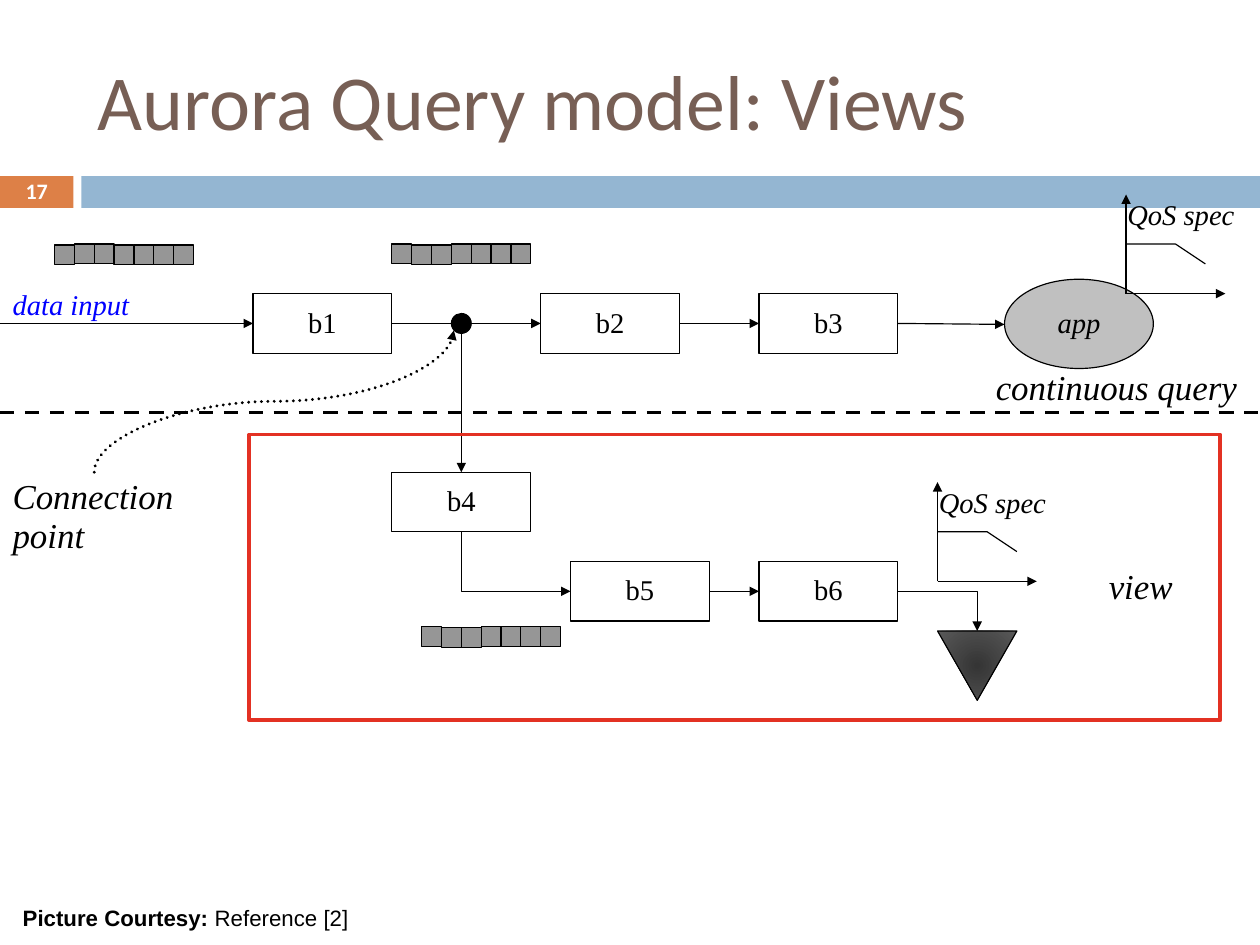
from dataclasses import dataclass

from lxml.etree import SubElement as Sub
from pptx import Presentation
from pptx.dml.color import RGBColor as Rgb
from pptx.enum.dml import MSO_LINE as Dash
from pptx.enum.shapes import MSO_CONNECTOR as Link, MSO_SHAPE as Form
from pptx.enum.text import MSO_ANCHOR as Anchor, MSO_AUTO_SIZE as Fit, PP_ALIGN as Align
from pptx.oxml.ns import qn
from pptx.util import Cm, Inches, Pt

WIDE, HIGH = Cm(28), Cm(21)
UNIT = WIDE / 127
SERIF = "Times New Roman"
HUES = {
    "ink": "000000", "paper": "FFFFFF", "title": "775F55", "orange": "DD8047",
    "sky": "94B6D2", "blue": "0000FF", "red": "E33123", "grey": "969696",
    "silver": "C0C0C0", "core": "353535", "rim": "595959",
}


@dataclass(frozen=True)
class Cell:
    col: float
    row: float
    wide: float
    high: float


@dataclass(frozen=True)
class Run:
    text: str
    size: float = 18
    font: str = SERIF
    hue: str = "ink"
    bold: bool = False
    slant: bool = False


@dataclass(frozen=True)
class Note:
    cell: Cell
    lines: tuple
    pad: float = 0.11
    wrap: bool = False


@dataclass(frozen=True)
class Wire:
    start: tuple
    stop: tuple
    kind: int = Link.STRAIGHT
    form: str = ""
    turn: int = 0
    flip: str = ""
    tail: str = ""
    head: str = ""
    side: int = 1
    tip: bool = True
    dash: object = None
    width: float = 0.75


def span(count: float) -> int:
    return round(count * UNIT)


def spot(col: float, row: float) -> tuple:
    return span(col + 0.5), span(row + 0.6)


def place(cell: Cell) -> tuple:
    return *spot(cell.col, cell.row), span(cell.wide), span(cell.high)


def tint(name: str) -> Rgb:
    return Rgb.from_string(HUES[name])


def write(frame, lines: tuple, align=Align.LEFT, pad: float = 0.11, wrap: bool = False, gap: float = 0.93) -> None:
    frame.word_wrap = wrap
    frame.margin_left = frame.margin_right = Inches(pad)
    frame.margin_top = frame.margin_bottom = Inches(pad / 2)
    for index, line in enumerate(lines):
        para = frame.add_paragraph() if index else frame.paragraphs[0]
        para.alignment, para.line_spacing = align, gap
        for item in line:
            run = para.add_run()
            run.text = item.text
            font = run.font
            font.name, font.size = item.font, Pt(item.size)
            font.bold, font.italic = item.bold, item.slant
            font.color.rgb = tint(item.hue)


def draw(slide, form, cell: Cell, fill: str = "", edge: str = "ink", width: float = 0.75, run: Run | None = None):
    shape = slide.shapes.add_shape(form, *place(cell))
    trim(shape, fill, edge, width)
    if run:
        shape.text_frame.vertical_anchor = Anchor.MIDDLE
        write(shape.text_frame, ((run,),), Align.CENTER)
    return shape


def trim(shape, fill: str, edge: str, width: float) -> None:
    shape.shadow.inherit = False
    if fill:
        shape.fill.solid()
        shape.fill.fore_color.rgb = tint(fill)
    else:
        shape.fill.background()
    if edge:
        shape.line.color.rgb, shape.line.width = tint(edge), Pt(width)
    else:
        shape.line.fill.background()


def label(slide, note: Note) -> None:
    frame = slide.shapes.add_textbox(*place(note.cell)).text_frame
    write(frame, note.lines, pad=note.pad, wrap=note.wrap)
    frame.auto_size = Fit.SHAPE_TO_FIT_TEXT


def join(slide, wire: Wire, boxes: dict) -> None:
    (left, top), (right, base) = wire.start, wire.stop
    if wire.turn:
        mid, level = (left + right) / 2, (top + base) / 2
        half, rise = abs(base - top) / 2, abs(right - left) / 2
        left, right, top, base = mid - half, mid + half, level - rise, level + rise
    link = slide.shapes.add_connector(wire.kind, *spot(left, top), *spot(right, base))
    if wire.tail:
        link.begin_connect(boxes[wire.tail], 3)
    if wire.head:
        link.end_connect(boxes[wire.head], wire.side)
    link.line.color.rgb, link.line.width = tint("ink"), Pt(wire.width)
    props = link._element.spPr
    edge = props.find(qn("a:ln"))
    if wire.dash:
        link.line.dash_style = wire.dash
    if wire.dash == Dash.ROUND_DOT:
        edge.set("cap", "rnd")
    if wire.form:
        props.find(qn("a:prstGeom")).set("prst", wire.form)
    if wire.turn:
        props.find(qn("a:xfrm")).set("rot", str(wire.turn * 60000))
    for axis in wire.flip:
        props.find(qn("a:xfrm")).set("flip" + axis, "1")
    if wire.tip:
        Sub(edge, qn("a:tailEnd"), type="triangle")
    Sub(props, qn("a:effectLst"))


def graph(slide, col: float, row: float) -> None:
    for stop in ((col, row - 10), (col + 10, row)):
        join(slide, Wire((col, row), stop), {})
    pen = slide.shapes.build_freeform(*spot(col, row - 5), scale=1.0)
    pen.add_line_segments([spot(col + 5, row - 5), spot(col + 8, row - 3)], close=False)
    trim(pen.convert_to_shape(), "", "ink", 0.75)
    text = Run("QoS spec", slant=True)
    label(slide, Note(Cell(col - 1, row - 10, 13.3, 4.4), ((text,),), 0.1))


def queue(slide, col: float, row: float, drops: str) -> None:
    for index, drop in enumerate(drops):
        draw(slide, Form.RECTANGLE, Cell(col + 2 * index, row + int(drop) / 10, 2, 2), "grey")


def sink(slide, cell: Cell) -> None:
    shape = draw(slide, Form.ISOSCELES_TRIANGLE, cell, "core")
    shape.fill.gradient()
    for stop, hue, mark in zip(shape.fill.gradient_stops, ("core", "rim"), (0, 1)):
        stop.color.rgb, stop.position = tint(hue), mark
    props = shape._element.spPr
    props.find(qn("a:xfrm")).set("flipV", "1")
    grad = props.find(qn("a:gradFill"))
    grad.remove(grad.find(qn("a:lin")))
    ring = Sub(grad, qn("a:path"), path="circle")
    Sub(ring, qn("a:fillToRect"), {side: "50000" for side in "ltrb"})


BOXES = {"b1": (25, 29), "b2": (54, 29), "b3": (76, 29), "b4": (39, 47), "b5": (57, 56), "b6": (76, 56)}
WIRES = (
    Wire((-0.5, 32), (25, 32), head="b1"),
    Wire((39, 32), (54, 32), tail="b1", head="b2"),
    Wire((68, 32), (76, 32), tail="b2", head="b3"),
    Wire((90, 32), (100.75, 32.1), tail="b3"),
    Wire((46, 33), (46, 47), head="b4", side=0),
    Wire((46, 53), (57, 59), Link.ELBOW, "bentConnector2", 270, "H"),
    Wire((71, 59), (76, 59), tail="b5", head="b6"),
    Wire((90, 59), (98, 63), Link.ELBOW, "bentConnector2"),
    Wire((-0.5, 41), (126.5, 41), tip=False, dash=Dash.DASH, width=2.25),
    Wire((9, 47), (45.25, 32.7), Link.CURVE, turn=90, flip="HV", dash=Dash.ROUND_DOT, width=2),
)
NOTES = (
    Note(Cell(98.6, 35.95, 27.1, 5.3), ((Run("continuous query", 22, slant=True),),)),
    Note(Cell(110, 56, 9.1, 5.3), ((Run("view", 22, slant=True),),)),
    Note(Cell(-0.5, 47, 18.9, 9.2), tuple((Run(word, 22, slant=True),) for word in ("Connection", "point"))),
    Note(Cell(-0.5, 28, 14.4, 4.5), ((Run("data input", hue="blue", slant=True),),)),
    Note(Cell(0.65, 90.2, 40.3, 3.8),
         ((Run("Picture Courtesy: ", 14, "Arial", bold=True), Run("Reference [2]", 14, "Arial")),), 0.1, True),
)


def main() -> None:
    deck = Presentation()
    deck.slide_width = WIDE
    deck.slide_height = HIGH
    slide = deck.slides.add_slide(deck.slide_layouts[5])
    head = slide.shapes.title
    head.left, head.top, head.width, head.height = place(Cell(8.1, 2.6, 113.3, 13.7))
    write(head.text_frame, ((Run("Aurora Query model: Views", 49, "Calibri", "title"),),), wrap=True, gap=1.0)
    head.text_frame.vertical_anchor, head.text_frame.auto_size = Anchor.MIDDLE, Fit.NONE
    page = Run("17", 13.9, "Calibri", "paper", True)
    draw(slide, Form.RECTANGLE, Cell(-0.5, 17.15, 7.4, 3.2), "orange", "", run=page)
    draw(slide, Form.RECTANGLE, Cell(7.7, 17.15, 118.8, 3.2), "sky", "")
    boxes = {name: draw(slide, Form.RECTANGLE, Cell(*base, 14, 6), "paper", run=Run(name))
             for name, base in BOXES.items()}
    draw(slide, Form.OVAL, Cell(100.75, 27.55, 15, 9), "silver", run=Run("app", slant=True))
    sink(slide, Cell(94, 63, 8, 7))
    for wire in WIRES:
        join(slide, wire, boxes)
    for base in ((113, 29), (94, 58)):
        graph(slide, *base)
    draw(slide, Form.OVAL, Cell(45, 31, 2, 2), "ink")
    for base in ((5, 24, "1001111"), (39, 24, "0110000"), (42, 62.55, "0110000")):
        queue(slide, *base)
    for note in NOTES:
        label(slide, note)
    draw(slide, Form.RECTANGLE, Cell(24.6, 43.2, 97.9, 28.8), edge="red", width=2.25)
    deck.save("out.pptx")


if __name__ == "__main__":
    main()
